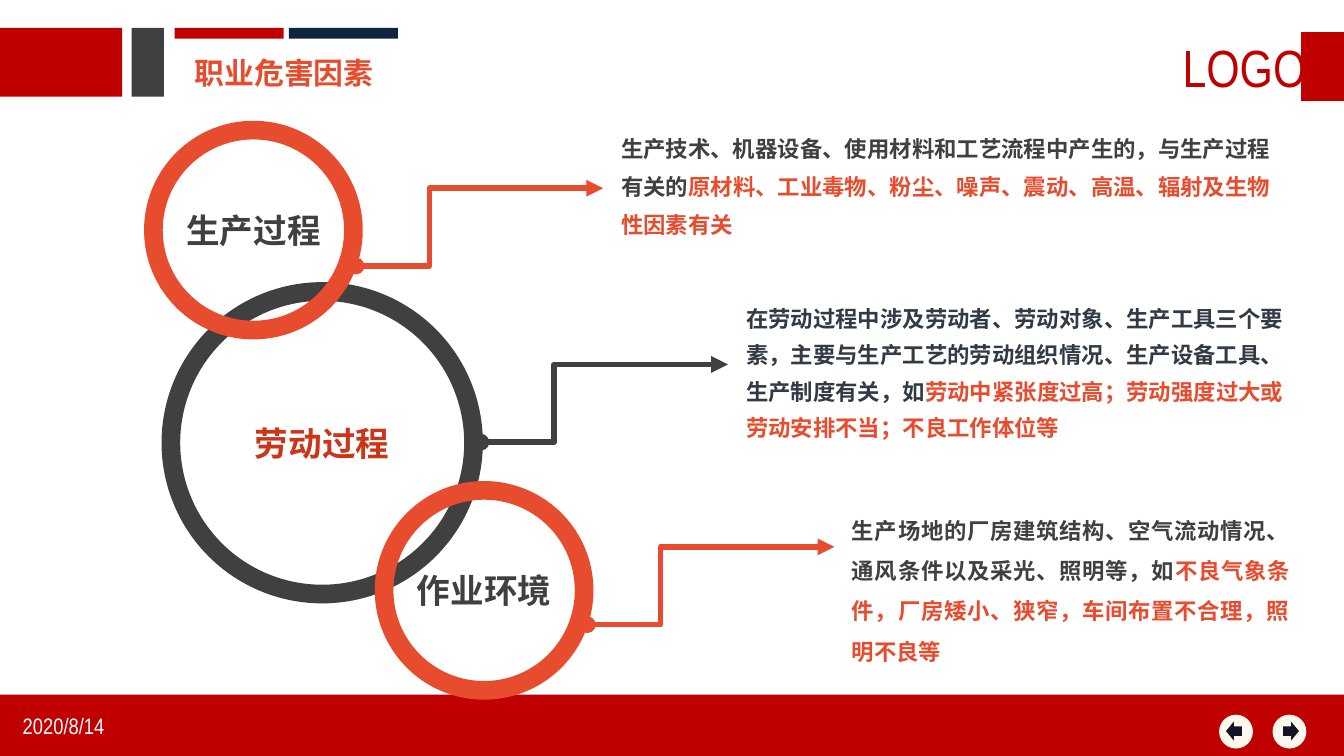
from lxml.etree import SubElement
from pptx import Presentation
from pptx.dml.color import RGBColor
from pptx.enum.shapes import MSO_CONNECTOR, MSO_SHAPE
from pptx.enum.text import MSO_ANCHOR, PP_ALIGN
from pptx.oxml.ns import qn
from pptx.util import Cm, Pt

COLORS = {
    "red": "C00000", "orange": "E74C2E", "brick": "CB3519", "gray": "404040",
    "slate": "323A45", "navy": "0F243E", "ink": "131426", "cream": "FCF8ED", "white": "FFFFFF",
}
NARROW, HAN = "Arial Narrow", "Noto Sans CJK SC"

BLOCKS = [
    (0, 13.13, 25.4, 1.16, "red"),
    (0, 0.53, 2.31, 1.3, "red"),
    (2.49, 0.53, 0.61, 1.3, "gray"),
    (24.59, 0.61, 0.81, 1.3, "red"),
    (3.3, 0.53, 2.06, 0.2, "red"),
    (5.46, 0.53, 2.06, 0.2, "navy"),
]
BUTTONS = [(23.04, 0.13, MSO_SHAPE.LEFT_ARROW), (24.05, 0.2, MSO_SHAPE.RIGHT_ARROW)]
FACTORS = [
    {
        "name": "劳动过程", "name_color": "brick", "ring": (3.23, 5.51, 5.72), "color": "gray",
        "start": (9.09, 8.36), "area": (13.82, 5.16, 10.85, 3.61),
        "spacing": Pt(19.4), "align": PP_ALIGN.LEFT,
        "text": [
            ("在劳动过程中涉及劳动者、劳动对象、生产工具三个要素，主要与生产工艺的劳动组织情况、生产设备工具、生产制度有关，如", "slate"),
            ("劳动中紧张度过高；劳动强度过大或劳动安排不当；不良工作体位等", "orange"),
        ],
    },
    {
        "name": "作业环境", "name_color": "gray", "ring": (7.26, 9.27, 3.78), "color": "orange",
        "start": (11.1, 11.81), "area": (15.82, 9.45, 8.84, 3.18),
        "spacing": 1.5, "align": PP_ALIGN.JUSTIFY,
        "text": [
            ("生产场地的厂房建筑结构、空气流动情况、通风条件以及采光、照明等，如", "gray"),
            ("不良气象条件，厂房矮小、狭窄，车间布置不合理，照明不良等", "orange"),
        ],
    },
    {
        "name": "生产过程", "name_color": "gray", "ring": (2.9, 2.46, 3.78), "color": "orange",
        "start": (6.73, 5.03), "area": (11.46, 2.13, 12.95, 2.59),
        "spacing": Pt(20.4), "align": PP_ALIGN.LEFT,
        "text": [
            ("生产技术、机器设备、使用材料和工艺流程中产生的，与生产过程有关的", "gray"),
            ("原材料、工业毒物、粉尘、噪声、震动、高温、辐射及生物性因素有关", "orange"),
        ],
    },
]
ARROW_RUN, ARROW_RISE, BEND = 4.67, 1.47, 29700


def color(name):
    return RGBColor.from_string(COLORS[name])


def add_solid(page, kind, left, top, width, height, fill):
    shape = page.shapes.add_shape(kind, Cm(left), Cm(top), Cm(width), Cm(height))
    shape.shadow.inherit = False
    shape.fill.solid()
    shape.fill.fore_color.rgb = color(fill)
    shape.line.fill.background()
    return shape


def add_span(paragraph, text, size, fill, font=HAN, bold=True):
    span = paragraph.add_run()
    span.text = text
    span.font.size, span.font.bold, span.font.name = Pt(size), bold, font
    span.font.color.rgb = color(fill)
    SubElement(span.font._element, qn("a:ea")).set("typeface", HAN)


def set_frame(frame, inset_x, inset_y, anchor=MSO_ANCHOR.MIDDLE, wrap=True):
    frame.word_wrap, frame.vertical_anchor = wrap, anchor
    frame.margin_left = frame.margin_right = Cm(inset_x)
    frame.margin_top = frame.margin_bottom = Cm(inset_y)
    return frame.paragraphs[0]


def add_text(page, area, inset_x=0.25, inset_y=0.13, **options):
    box = page.shapes.add_textbox(*map(Cm, area))
    return set_frame(box.text_frame, inset_x, inset_y, **options)


def add_ring(page, factor):
    left, top, size = factor["ring"]
    ring = add_solid(page, MSO_SHAPE.OVAL, left, top, size, size, "white")
    ring.fill.background()
    ring.line.color.rgb = color(factor["color"])
    ring.line.width = Pt(10)
    paragraph = set_frame(ring.text_frame, 0, 0)
    paragraph.alignment = PP_ALIGN.CENTER
    add_span(paragraph, factor["name"], 18, factor["name_color"])


def add_arrow(page, factor):
    x, y = factor["start"]
    arrow = page.shapes.add_connector(
        MSO_CONNECTOR.ELBOW, Cm(x), Cm(y), Cm(x + ARROW_RUN), Cm(y - ARROW_RISE))
    arrow.line.color.rgb = color(factor["color"])
    arrow.line.width = Pt(3)
    line = arrow.line._get_or_add_ln()
    SubElement(line, qn("a:headEnd")).set("type", "oval")
    SubElement(line, qn("a:tailEnd")).set("type", "triangle")
    properties = arrow._element.spPr
    SubElement(properties, qn("a:effectLst"))
    guides = properties.find(qn("a:prstGeom")).find(qn("a:avLst"))
    guide = SubElement(guides, qn("a:gd"))
    guide.set("name", "adj1")
    guide.set("fmla", f"val {BEND}")


def add_factor(page, factor):
    add_ring(page, factor)
    add_arrow(page, factor)
    paragraph = add_text(page, factor["area"], 0.28, 0.15)
    paragraph.line_spacing, paragraph.alignment = factor["spacing"], factor["align"]
    for text, fill in factor["text"]:
        add_span(paragraph, text, 12, fill)


def main():
    """Build the slide on occupational hazard factors."""
    deck = Presentation()
    deck.slide_width, deck.slide_height = Cm(25.4), Cm(14.29)
    page = deck.slides.add_slide(deck.slide_layouts[6])
    for *area, fill in BLOCKS:
        add_solid(page, MSO_SHAPE.RECTANGLE, *area, fill)
    for left, offset, kind in BUTTONS:
        add_solid(page, MSO_SHAPE.OVAL, left, 13.51, 0.64, 0.64, "cream")
        add_solid(page, kind, left + offset, 13.64, 0.3, 0.36, "ink")
    logo = add_text(page, (22.1, 0.53, 3.02, 1.42), anchor=MSO_ANCHOR.TOP, wrap=False)
    add_span(logo, "LOGO", 28, "red", NARROW, False)
    date = add_text(page, (0.18, 13.34, 5.92, 0.76))
    add_span(date, "2020/8/14", 12, "white", NARROW, False)
    for factor in FACTORS:
        add_factor(page, factor)
    title = add_text(page, (3.23, 0.91, 4.29, 0.94), anchor=MSO_ANCHOR.TOP)
    title.alignment = PP_ALIGN.CENTER
    add_span(title, "职业危害因素", 16, "orange", NARROW)
    deck.save("out.pptx")


if __name__ == "__main__":
    main()
